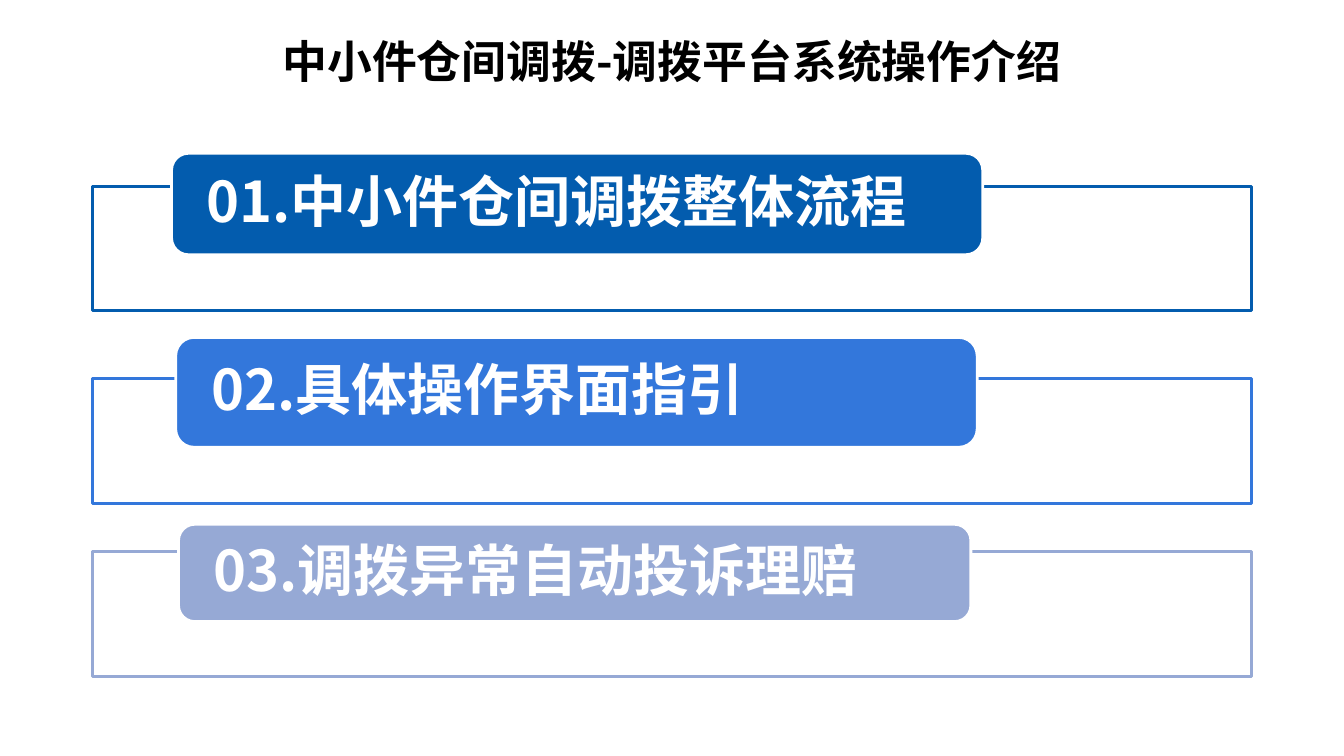
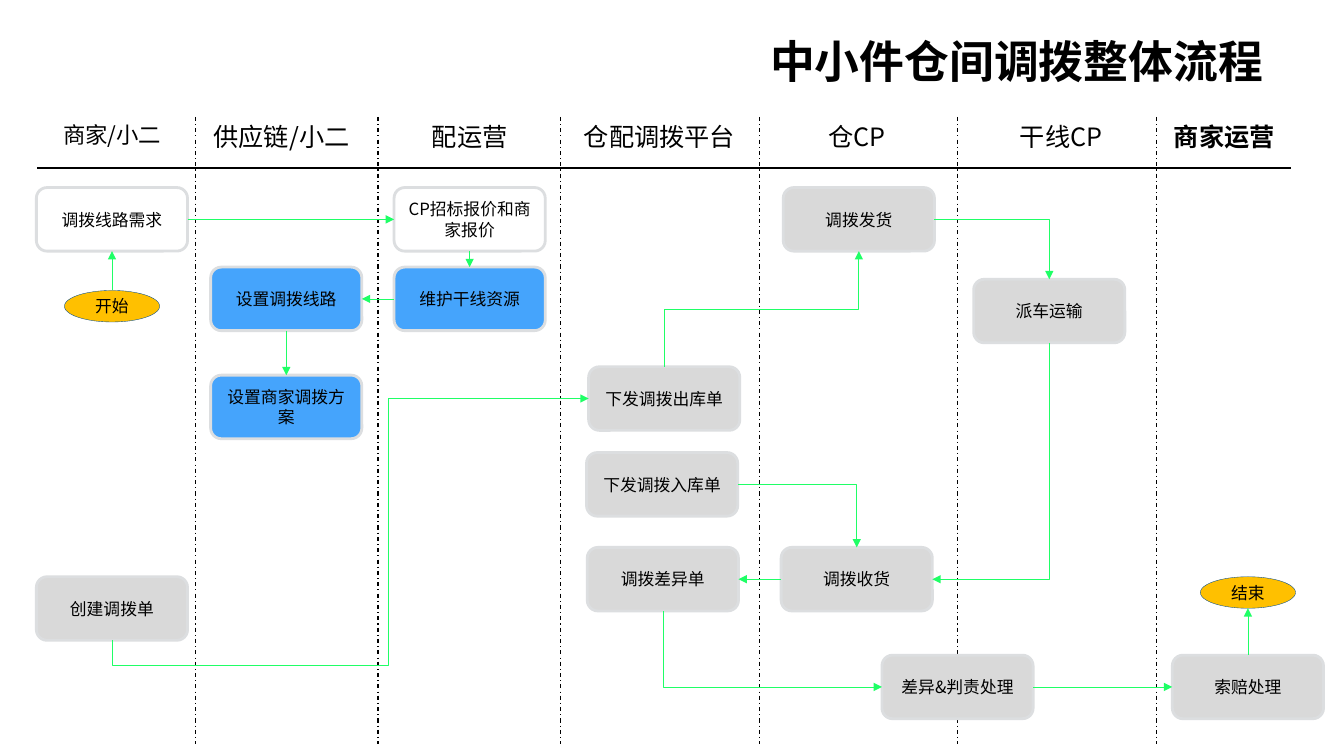
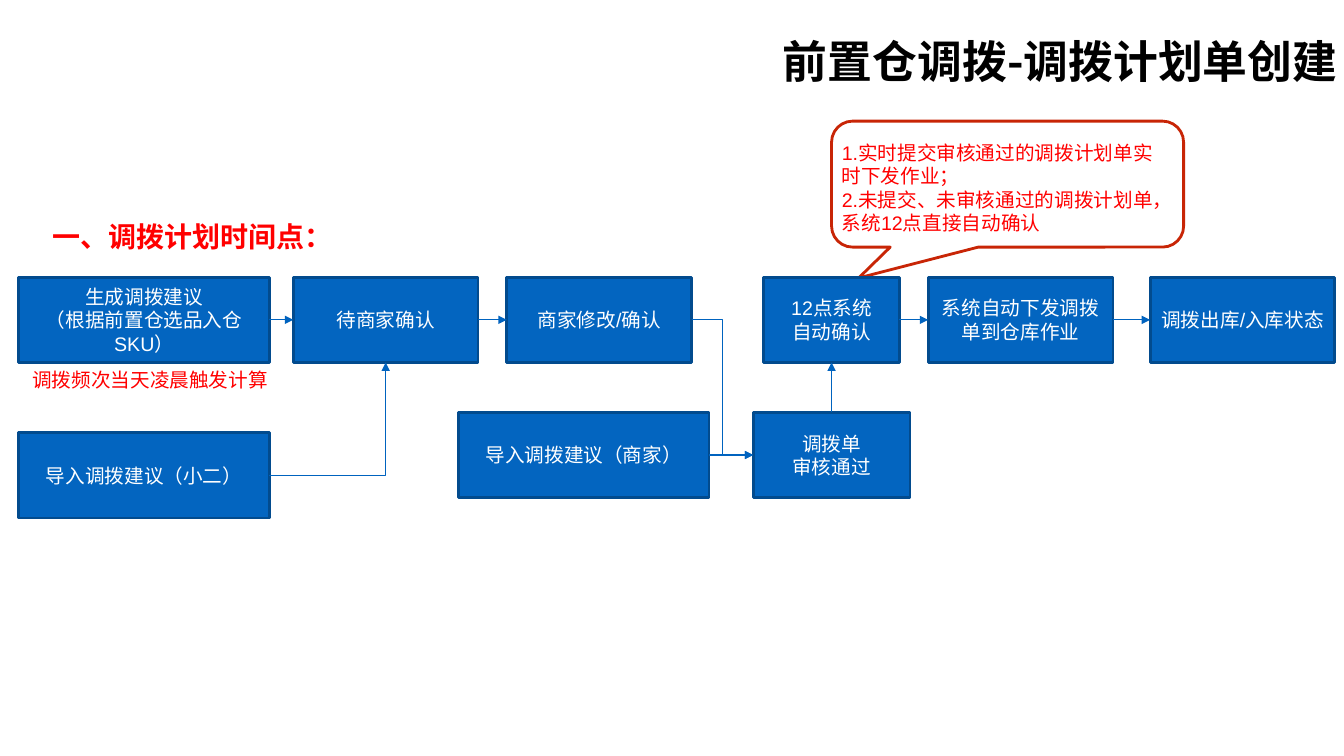
from lxml import etree
from pptx import Presentation
from pptx.dml.color import RGBColor
from pptx.enum import dml, shapes, text
from pptx.oxml import ns
from pptx.util import Pt

SANS, ARIAL = "Noto Sans CJK SC", "Arial"
BLACK, WHITE, RED = "000000", "FFFFFF", "FF0000"
BLUE, NAVY, SKY = "0365C0", "024B8E", "45A4FC"
GREY, RIM, GOLD = "D9D9D9", "DCDEE0", "FFC000"
GREEN, LINK = "1FFF66", "0063BF"
KIND = shapes.MSO_SHAPE
WIRE = shapes.MSO_CONNECTOR
ALIGN = {"l": text.PP_ALIGN.LEFT, "c": text.PP_ALIGN.CENTER, "r": text.PP_ALIGN.RIGHT}


# Shared helpers
def paint(target, color):
    target.rgb = RGBColor.from_string(color)


def write(shape, words, size, color, align="l", bold=False, face=SANS,
          pad=(7.2, 3.6, 7.2, 3.6), mid=True):
    frame = shape.text_frame
    frame.word_wrap = True
    frame.vertical_anchor = text.MSO_ANCHOR.MIDDLE if mid else text.MSO_ANCHOR.TOP
    (frame.margin_left, frame.margin_top,
     frame.margin_right, frame.margin_bottom) = map(Pt, pad)
    frame.text = words
    for par in frame.paragraphs:
        par.alignment = ALIGN[align]
        for run in par.runs:
            font = run.font
            font.size, font.bold, font.name = Pt(size), bold, face
            paint(font.color, color)
            etree.SubElement(run._r.get_or_add_rPr(), ns.qn("a:ea"), typeface=SANS)


def label(slide, box, words, size, color, **style):
    write(slide.shapes.add_textbox(*map(Pt, box)), words, size, color, **style)


def block(slide, kind, box, fill, line, width=2):
    shape = slide.shapes.add_shape(kind, *map(Pt, box))
    shape.shadow.inherit = False
    shape.fill.solid()
    paint(shape.fill.fore_color, fill)
    paint(shape.line.color, line)
    shape.line.width = Pt(width)
    return shape


def title(slide, right, align="r"):
    def put(words):
        label(slide, (right - 828, 10, 828, 66), words, 32, BLACK, align=align,
              bold=True, pad=(4.5,) * 4)
    return put


def stroke(wire, color, width, dash=None, arrow=False):
    paint(wire.line.color, color)
    wire.line.width = Pt(width)
    if dash:
        wire.line.dash_style = dash
    props = wire._element.spPr
    if arrow:
        etree.SubElement(props.find(ns.qn("a:ln")), ns.qn("a:tailEnd"), type="triangle")
    etree.SubElement(props, ns.qn("a:effectLst"))


def rule(slide, x1, y1, x2, y2, width, dash=None):
    wire = slide.shapes.add_connector(WIRE.STRAIGHT, *map(Pt, (x1, y1, x2, y2)))
    stroke(wire, BLACK, width, dash)


def side(shape, spot):
    return (int(shape.left + shape.width * (0.5, 0, 0.5, 1)[spot]),
            int(shape.top + shape.height * (0, 0.5, 1, 0.5)[spot]))


def bend(wire, start, end, upright, adj, count):
    """Shape an elbow; one that leaves up or down is a turned elbow."""
    props = wire._element.spPr
    geom = props.find(ns.qn("a:prstGeom"))
    geom.set("prst", f"bentConnector{count}")
    guides = geom.find(ns.qn("a:avLst"))
    for num, value in enumerate(adj, 1):
        etree.SubElement(guides, ns.qn("a:gd"), name=f"adj{num}",
                         fmla=f"val {round(value * 100000)}")
    if upright:
        dx, dy = end[0] - start[0], end[1] - start[1]
        wide, high = abs(dy), abs(dx)
        wire.left = (start[0] + end[0] - wide) // 2
        wire.top = (start[1] + end[1] - high) // 2
        wire.width, wire.height = wide, high
        frame = props.find(ns.qn("a:xfrm"))
        frame.set("rot", "5400000")
        frame.set("flipH", str(int(dy < 0)))
        frame.set("flipV", str(int(dx > 0)))


def join(slide, a, i, b, j, color, width, adj=()):
    """Arrow from side i of a to side j of b (0 top, 1 left, 2 bottom, 3 right)."""
    start, end = side(a, i), side(b, j)
    flat = min(abs(start[0] - end[0]), abs(start[1] - end[1])) < Pt(1)
    wire = slide.shapes.add_connector(WIRE.STRAIGHT if flat else WIRE.ELBOW, *start, *end)
    wire.begin_connect(a, i)
    if b.auto_shape_type != KIND.OVAL:
        wire.end_connect(b, j)
    if not flat:
        count = 2 + len(adj) if adj else 3 if i % 2 == j % 2 else 2
        bend(wire, start, end, i % 2 == 0, adj, count)
    stroke(wire, color, width, arrow=True)


# Slide 1: agenda
def entry(slide, top, color, tab, words):
    block(slide, KIND.RECTANGLE, (66, top, 828, 89), WHITE, color)
    shape = block(slide, KIND.ROUNDED_RECTANGLE, tab, color, WHITE)
    write(shape, words, 40, WHITE, bold=True, pad=(21.6, 0, 21.6, 0))
    shape.text_frame.paragraphs[0].line_spacing = 0.9


def agenda(slide):
    title(slide, 894, "c")("中小件仓间调拨-调拨平台系统操作介绍")
    entry(slide, 133, "035CAE", (122.5, 109.5, 579.5, 72.5), "01.中小件仓间调拨整体流程")
    entry(slide, 270.5, "3377DB", (125.5, 241, 572.5, 78.5), "02.具体操作界面指引")
    entry(slide, 394, "96A9D5", (127.5, 374.5, 566, 69.5), "03.调拨异常自动投诉理赔")


# Slide 2: swim lanes
def lanes(slide):
    rule(slide, 26.5, 120.2, 922.5, 120.2, 1.5)
    marks = [139.7 + 130.3 * n for n in range(3)] + [542.2 + 141.8 * n for n in range(3)]
    for x in marks:
        rule(slide, x, 83.5, x, 531.5, 0.75, dml.MSO_LINE.DASH_DOT)
    heads = [(38, "商家/小二"), (145.5, "供应链/小二"), (301.5, "配运营"),
             (410, "仓配调拨平台"), (584.5, "仓CP"), (721.5, "干线CP"), (831.5, "商家运营")]
    for x, words in heads:
        first, last = words == heads[0][1], words == heads[-1][1]
        label(slide, (x, 82.8, 127.5, 28.8), words, 16 if first else 18, BLACK,
              bold=last, face=ARIAL if last else SANS, mid=False)


def flow(slide):
    title(slide, 907)("中小件仓间调拨整体流程")
    lanes(slide)

    # Steps
    steps = {
        "need": ("调拨线路需求", 26, 134, WHITE),
        "bid": ("CP招标报价和商家报价", 281.5, 134, WHITE),
        "trunk": ("维护干线资源", 281.5, 190.8, SKY),
        "route": ("设置调拨线路", 150.5, 190.8, SKY),
        "plan": ("设置商家调拨方案", 150.5, 268, SKY),
        "make": ("创建调拨单", 26, 412, GREY),
        "out": ("下发调拨出库单", 420.5, 262, GREY),
        "in": ("下发调拨入库单", 419, 323.3, GREY),
        "gap": ("调拨差异单", 419.5, 391, GREY),
        "send": ("调拨发货", 559.5, 134, GREY),
        "get": ("调拨收货", 558, 391, GREY),
        "truck": ("派车运输", 695.5, 199.5, GREY),
        "judge": ("差异&判责处理", 630, 468, GREY),
        "claim": ("索赔处理", 837.4, 468, GREY),
    }
    nodes = {}
    for key, (words, x, y, fill) in steps.items():
        nodes[key] = block(slide, KIND.ROUNDED_RECTANGLE, (x, y, 108, 45.4), fill, RIM)
        write(nodes[key], words, 12, BLACK, align="c")
    for key, words, x, y in (("start", "开始", 46, 207.5), ("end", "结束", 857.4, 412)):
        nodes[key] = block(slide, KIND.OVAL, (x, y, 68, 22.5), GOLD, NAVY, 0.25)
        write(nodes[key], words, 12, BLACK, align="c", pad=(7.2, 0, 7.2, 0))

    # Arrows
    for a, i, b, j, *adj in (
            ("start", 0, "need", 2), ("need", 3, "bid", 1), ("bid", 2, "trunk", 0),
            ("trunk", 1, "route", 3), ("route", 2, "plan", 0),
            ("make", 2, "out", 1, -0.104, 0.579), ("out", 0, "send", 2, 0.5),
            ("send", 3, "truck", 0), ("truck", 2, "get", 3), ("in", 3, "get", 0),
            ("get", 1, "gap", 3), ("gap", 2, "judge", 1), ("judge", 3, "claim", 1),
            ("claim", 0, "end", 2)):
        join(slide, nodes[a], i, nodes[b], j, GREEN, 0.5, adj)


# Slide 3: plan creation
def plan(slide):
    title(slide, 960)("前置仓调拨-调拨计划单创建")
    note = block(slide, KIND.ROUNDED_RECTANGULAR_CALLOUT, (594, 86.5, 251.5, 90),
                 WHITE, "C82506")
    for n, value in enumerate((-0.423, 0.745, 0.167)):
        note.adjustments[n] = value
    write(note, "1.实时提交审核通过的调拨计划单实时下发作业；\n"
          "2.未提交、未审核通过的调拨计划单，系统12点直接自动确认",
          14, RED, face=ARIAL, pad=(2.9, 5, 10, 0))
    label(slide, (30.2, 153.5, 294, 31.5), "一、调拨计划时间点：", 20, RED,
          bold=True, face=ARIAL, mid=False)
    label(slide, (16, 259.2, 192, 24.5), "调拨频次当天凌晨触发计算", 14, RED,
          face=ARIAL, mid=False)

    # Steps
    nodes = {}
    for key, words, x, y, width in (
            ("draft", "生成调拨建议\n（根据前置仓选品入仓SKU）", 13.5, 198, 179),
            ("wait", "待商家确认", 209.5, 198, 132),
            ("edit", "商家修改/确认", 362, 198, 132),
            ("noon", "12点系统\n自动确认", 545.5, 198, 97),
            ("issue", "系统自动下发调拨单到仓库作业", 663, 198, 132),
            ("state", "调拨出库/入库状态", 821.5, 198, 132),
            ("staff", "导入调拨建议（小二）", 13.5, 309, 179),
            ("shop", "导入调拨建议（商家）", 327.5, 294.5, 179),
            ("pass", "调拨单\n审核通过", 538, 294.5, 112)):
        nodes[key] = block(slide, KIND.RECTANGLE, (x, y, width, 61), BLUE, NAVY)
        write(nodes[key], words, 14, WHITE, align="c", face=ARIAL)

    # Arrows
    for a, i, b, j in (
            ("draft", 3, "wait", 1), ("wait", 3, "edit", 1), ("edit", 3, "pass", 1),
            ("noon", 3, "issue", 1), ("issue", 3, "state", 1), ("staff", 3, "wait", 2),
            ("shop", 3, "pass", 1), ("pass", 0, "noon", 2)):
        join(slide, nodes[a], i, nodes[b], j, LINK, 0.75)


def main():
    deck = Presentation()
    deck.slide_width, deck.slide_height = Pt(960), Pt(540)
    for build in (agenda, flow, plan):
        build(deck.slides.add_slide(deck.slide_layouts[6]))
    deck.save("out.pptx")


if __name__ == "__main__":
    main()
